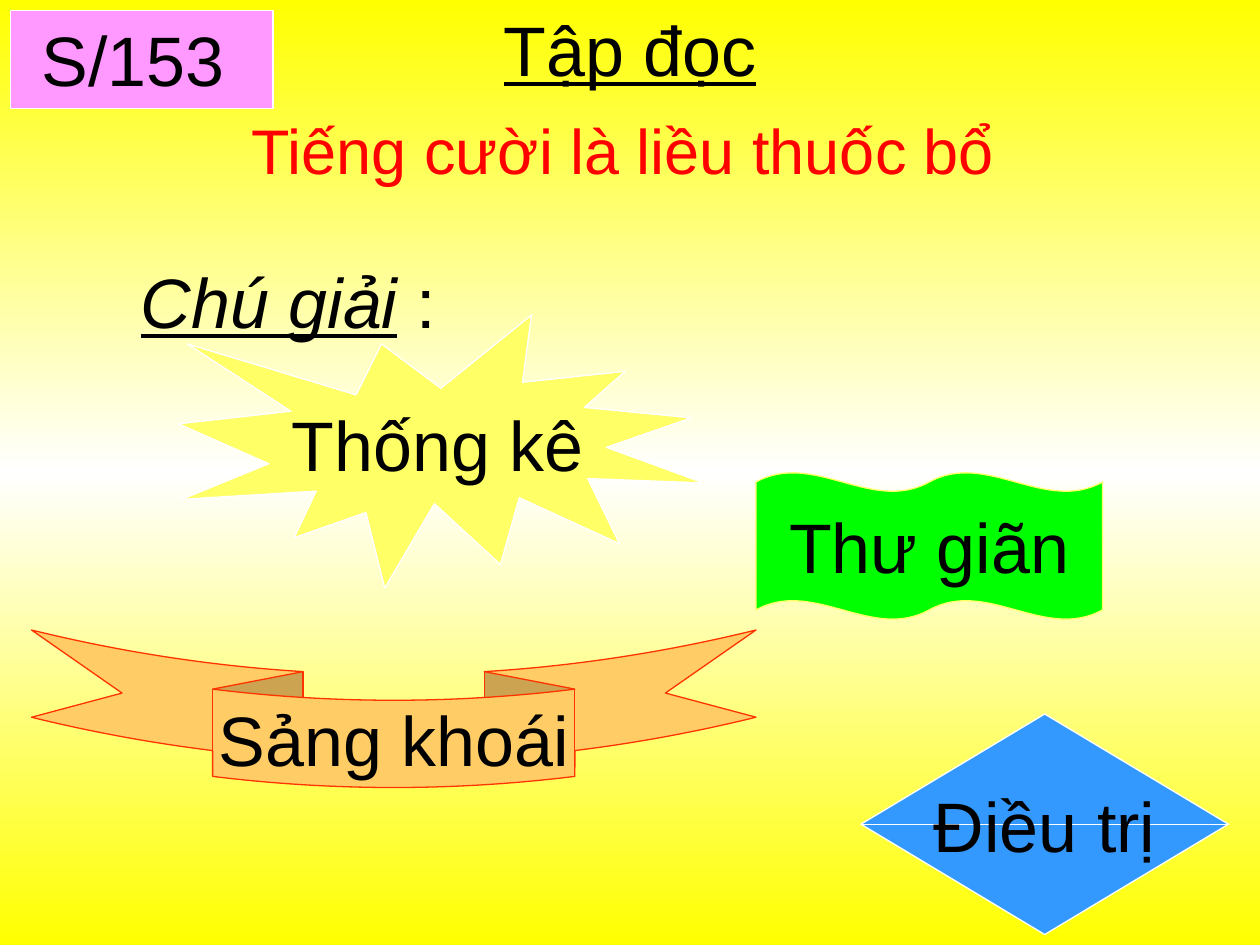
from copy import deepcopy

from pptx import Presentation
from pptx.dml.color import RGBColor
from pptx.enum.shapes import MSO_SHAPE
from pptx.enum.text import MSO_ANCHOR, PP_ALIGN
from pptx.oxml.ns import qn
from pptx.util import Inches, Pt

RECTANGLE = MSO_SHAPE.RECTANGLE
BURST = MSO_SHAPE.EXPLOSION1
WAVE = MSO_SHAPE.DOUBLE_WAVE
RIBBON = MSO_SHAPE.CURVED_DOWN_RIBBON
DIAMOND = MSO_SHAPE.FLOWCHART_SORT
LEFT, CENTER = PP_ALIGN.LEFT, PP_ALIGN.CENTER
TOP, MIDDLE = MSO_ANCHOR.TOP, MSO_ANCHOR.MIDDLE

FONT = "Arial"
COLORS = {
    "black": "000000", "white": "FFFFFF", "yellow": "FFFF00", "red": "FF0000",
    "pink": "FF99FF", "lemon": "FFFF66", "green": "00FF00",
    "orange": "FFCC66", "scarlet": "FF3300", "blue": "3399FF",
}


def rgb(name):
    return RGBColor.from_string(COLORS[name])


def grid(*cells):
    """Turn columns and rows of a 120 by 90 grid into lengths."""
    return [Inches(cell / 12) for cell in cells]


def paint_background(slide, edge, middle):
    """Fill from edge colour at the top through middle and back."""
    fill = slide.background.fill
    fill.gradient()
    fill.gradient_angle = 270
    stop_list = slide.element.find(".//" + qn("a:gsLst"))
    stop_list.insert(1, deepcopy(stop_list[0]))
    for stop, position, color in zip(fill.gradient_stops, (0, 0.5, 1), (edge, middle, edge)):
        stop.position = position
        stop.color.rgb = rgb(color)


def write(shape, runs, size=40, color="black", align=LEFT, anchor=TOP, indent=0, wrap=True):
    """Write (text, italic, underline) runs; indent is in inches."""
    frame = shape.text_frame
    frame.word_wrap = wrap
    frame.vertical_anchor = anchor
    paragraph = frame.paragraphs[0]
    paragraph.alignment = align
    if indent:
        properties = paragraph._p.get_or_add_pPr()
        properties.set("marL", str(Inches(indent)))
        properties.set("indent", "0")
    for text, italic, underline in runs:
        run = paragraph.add_run()
        run.text = text
        font = run.font
        font.name, font.size = FONT, Pt(size)
        font.italic, font.underline = italic, underline
        font.color.rgb = rgb(color)


def add_label(slide, cells, runs, **style):
    write(slide.shapes.add_textbox(*grid(*cells)), runs, **style)


def add_figure(slide, kind, cells, text, fill, line, adjustments=(), **style):
    shape = slide.shapes.add_shape(kind, *grid(*cells))
    shape.shadow.inherit = False
    shape.fill.solid()
    shape.fill.fore_color.rgb = rgb(fill)
    shape.line.color.rgb = rgb(line)
    shape.line.width = Pt(0.75)
    for index, value in enumerate(adjustments):
        shape.adjustments[index] = value
    write(shape, [(text, False, False)], **style)


def main():
    presentation = Presentation()
    presentation.slide_width, presentation.slide_height = grid(120, 90)
    slide = presentation.slides.add_slide(presentation.slide_layouts[6])
    paint_background(slide, "yellow", "white")

    add_label(slide, (45, 0, 33, 9.25), [("Tập đọc", False, True)], indent=0.15)
    add_label(slide, (18, 10, 81, 11), [("Tiếng cười là liều thuốc bổ", False, False)],
              size=36, color="red", align=CENTER, indent=0.14)
    add_figure(slide, RECTANGLE, (1, 1, 25, 9.35), "S/153", "pink", "white", indent=0.15)
    add_label(slide, (3, 24, 50, 9.25),
              [("Chú giải", True, True), (" :", False, False)], indent=0.77)

    words = [
        (BURST, (17, 30, 50, 26), "Thống kê", "lemon", "white", ()),
        (WAVE, (72, 45, 33, 14), "Thư giãn", "green", "lemon", (0.065, 0)),
        (RIBBON, (3, 60, 69, 15), "Sảng khoái", "orange", "scarlet", (0.446, 0.5, 0.282)),
        (DIAMOND, (82, 68, 35, 21), "Điều trị", "blue", "white", ()),
    ]
    for word in words:
        add_figure(slide, *word, align=CENTER, anchor=MIDDLE, wrap=False)

    presentation.save("out.pptx")


if __name__ == "__main__":
    main()
